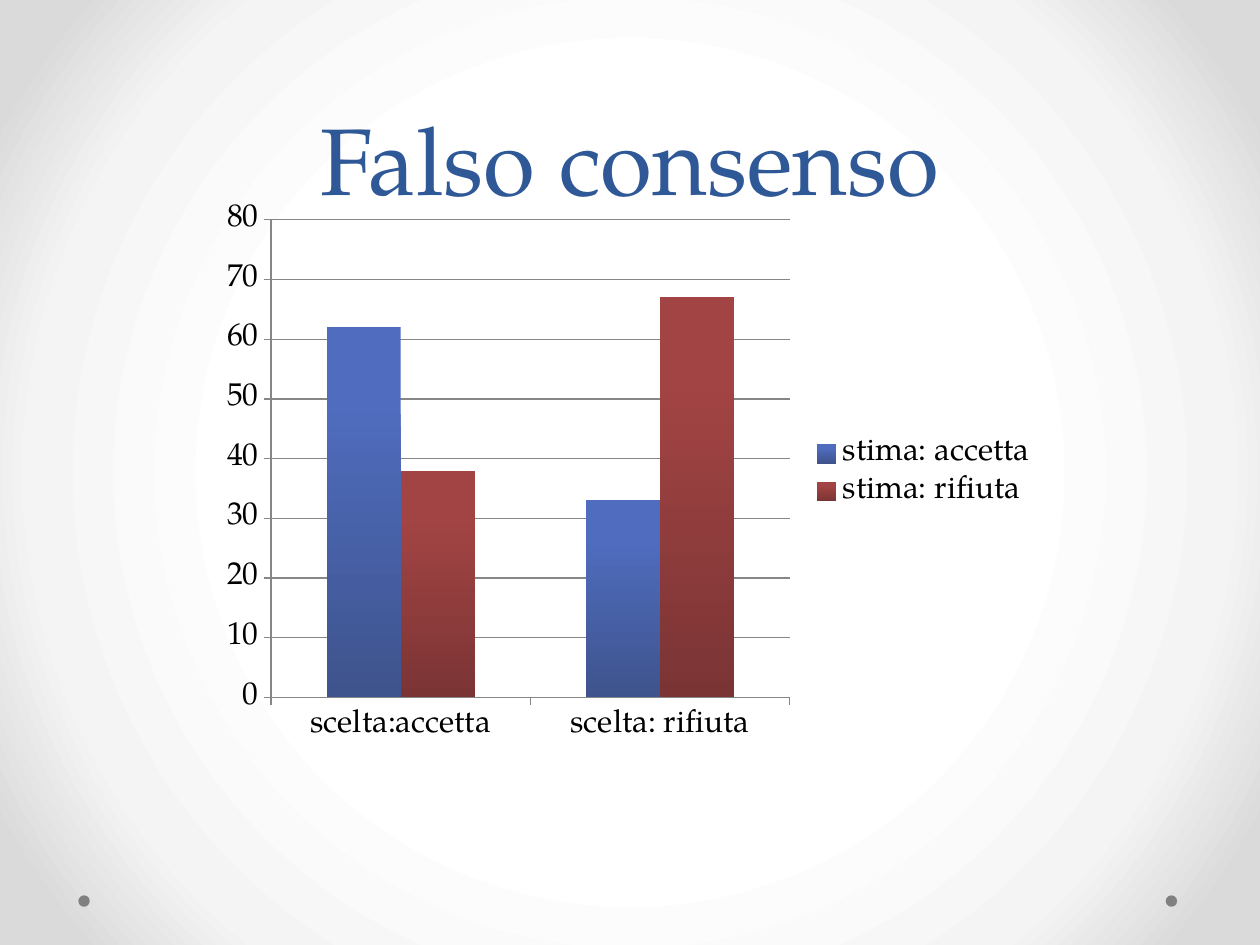
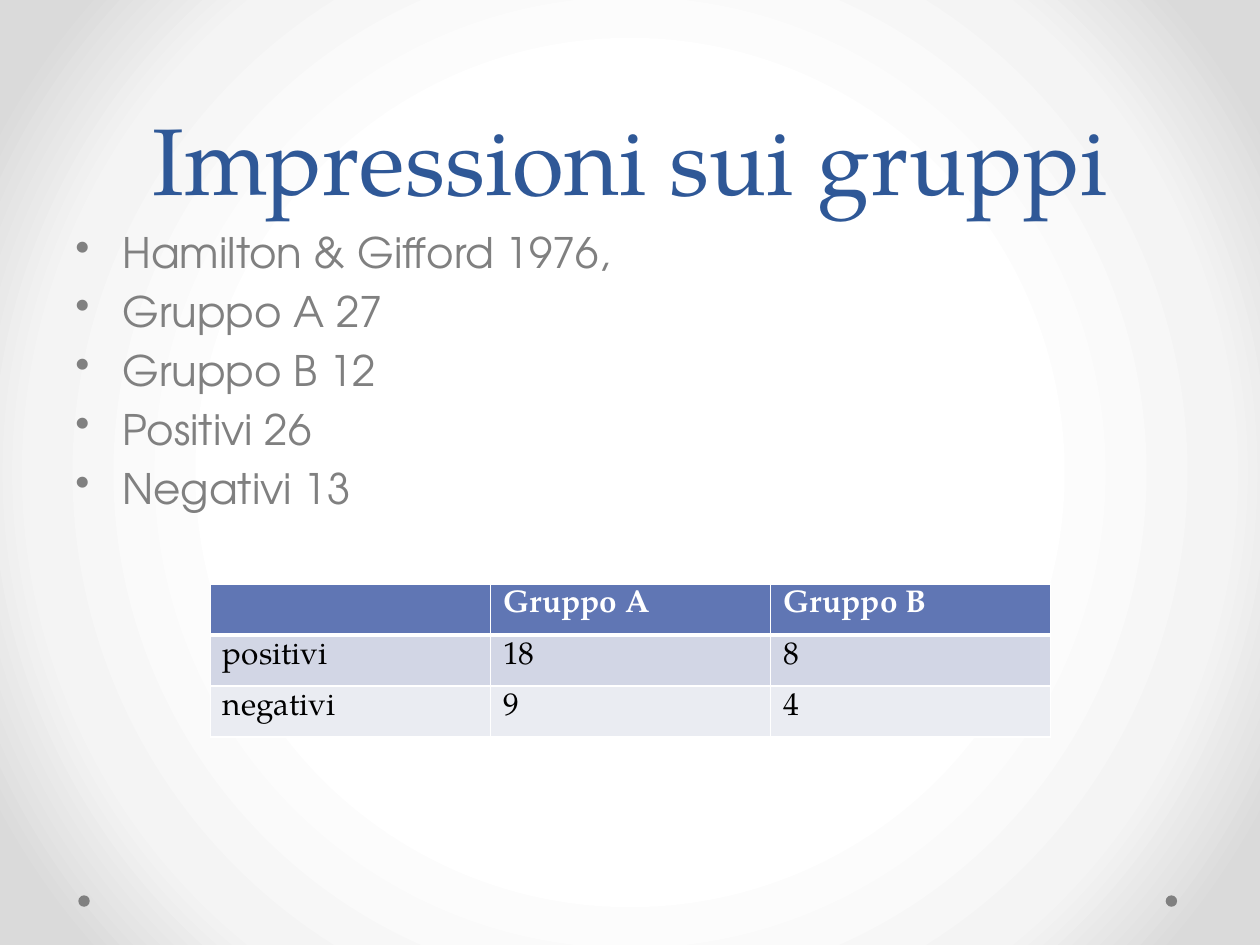
from pptx import Presentation
from pptx.chart.data import CategoryChartData
from pptx.dml.color import RGBColor
from pptx.enum.chart import XL_CHART_TYPE, XL_LEGEND_POSITION, XL_TICK_MARK
from pptx.enum.shapes import MSO_SHAPE
from pptx.enum.text import MSO_ANCHOR, PP_ALIGN
from pptx.oxml import parse_xml
from pptx.oxml.ns import nsdecls
from pptx.util import Cm, Pt

COLUMN = XL_CHART_TYPE.COLUMN_CLUSTERED
RIGHT = XL_LEGEND_POSITION.RIGHT
OUT = XL_TICK_MARK.OUTSIDE
OVAL = MSO_SHAPE.OVAL
TOP, BOTTOM = MSO_ANCHOR.TOP, MSO_ANCHOR.BOTTOM
LEFT, CENTER = PP_ALIGN.LEFT, PP_ALIGN.CENTER

# Shared look
SERIF, SANS = "TeX Gyre Pagella", "TeX Gyre Adventor"
NAVY, BLUE, GRAY = "2F5897", "6076B4", "808080"
BLACK, WHITE, AXIS = "000000", "FFFFFF", "868686"
BANDS = ["D2D6E5", "EAECF2"]
GLOW = [(50, WHITE), (76, "F4F4F4"), (92, "DADADA")]
BARS = [("4F6CBE", "3F548D"), ("A34444", "7B3434")]


def color(code):
    return RGBColor.from_string(code)


def write(para, text, size=18, font=SERIF, fill=BLACK, bold=False,
          align=LEFT, line=None, before=None, bullet=None):
    para.alignment = align
    if line:
        para.line_spacing = Pt(line)
    if before:
        para.space_before = Pt(before)
    if bullet:
        props = para._p.get_or_add_pPr()
        props.set("marL", str(Cm(0.95)))
        props.set("indent", str(-Cm(0.95)))
        props.append(parse_xml(f'<a:buChar {nsdecls("a")} char="{bullet}"/>'))
    run = para.add_run()
    run.text = text
    run.font.size, run.font.name, run.font.bold = Pt(size), font, bold
    run.font.color.rgb = color(fill)


def add_box(slide, lines, x, y, w, h, anchor=TOP, **form):
    frame = slide.shapes.add_textbox(Cm(x), Cm(y), Cm(w), Cm(h)).text_frame
    frame.word_wrap = True
    frame.vertical_anchor = anchor
    for i, text in enumerate(lines):
        para = frame.add_paragraph() if i else frame.paragraphs[0]
        write(para, text, **form)


def add_glow(slide):
    stops = "".join(
        f'<a:gs pos="{pos * 1000}"><a:srgbClr val="{code}"/></a:gs>'
        for pos, code in GLOW)
    slide.background.fill.solid()
    props = slide._element.cSld.bg.bgPr
    solid = props[0]
    props.replace(solid, parse_xml(
        f'<a:gradFill {nsdecls("a")} rotWithShape="1"><a:gsLst>{stops}</a:gsLst>'
        '<a:path path="circle"><a:fillToRect l="50000" t="50000" '
        'r="50000" b="50000"/></a:path></a:gradFill>'))


def add_dot(slide, x):
    dot = slide.shapes.add_shape(OVAL, Cm(x), Cm(18.05), Cm(0.23), Cm(0.23))
    dot.shadow.inherit = False
    dot.fill.solid()
    dot.fill.fore_color.rgb = color(GRAY)
    dot.line.fill.background()


def add_page(deck, title):
    slide = deck.slides.add_slide(deck.slide_layouts[6])
    add_glow(slide)
    for x in (1.58, 23.5):
        add_dot(slide, x)
    add_box(slide, [title], 1.27, 0, 22.86, 4.45, anchor=BOTTOM,
            size=54, fill=NAVY, align=CENTER, line=58)
    return slide


def add_bars(slide, cats, rows, x, y, w, h):
    data = CategoryChartData()
    data.categories = cats
    for name, vals in rows:
        data.add_series(name, vals)
    chart = slide.shapes.add_chart(
        COLUMN, Cm(x), Cm(y), Cm(w), Cm(h), data).chart
    chart.has_title = False
    chart.font.size, chart.font.name = Pt(18), SERIF
    chart.font.color.rgb = color(BLACK)
    chart.has_legend = True
    chart.legend.position = RIGHT
    chart.legend.include_in_layout = False

    # Axes and grid
    scale = chart.value_axis
    scale.minimum_scale, scale.maximum_scale, scale.major_unit = 0, 80, 10
    scale.has_major_gridlines = True
    for axis in (chart.category_axis, scale):
        axis.major_tick_mark = OUT
    for part in (chart.category_axis, scale, scale.major_gridlines):
        part.format.line.color.rgb = color(AXIS)
        part.format.line.width = Pt(0.75)

    # Shaded columns
    plot = chart.plots[0]
    plot.gap_width, plot.overlap = 150, 0
    plot.vary_by_categories = False
    for row, shades in zip(plot.series, BARS):
        fill = row.format.fill
        fill.gradient()
        fill.gradient_angle = 270
        for stop, pos, shade in zip(fill.gradient_stops, (0.2, 1), shades):
            stop.position = pos
            stop.color.rgb = color(shade)


def add_edges(cell, **widths):
    props = cell._tc.get_or_add_tcPr()
    for side in "LRTB":
        width = Pt(widths.get(side, 1))
        props.append(parse_xml(
            f'<a:ln{side} {nsdecls("a")} w="{width}"><a:solidFill>'
            f'<a:srgbClr val="{WHITE}"/></a:solidFill></a:ln{side}>'))


def add_grid(slide, rows, x, y, w, h):
    grid = slide.shapes.add_table(
        len(rows), len(rows[0]), Cm(x), Cm(y), Cm(w), Cm(h)).table
    for r, row in enumerate(rows):
        head = r == 0
        for c, text in enumerate(row):
            cell = grid.cell(r, c)
            add_edges(cell, B=3 if head else 1, T=3 if r == 1 else 1)
            cell.fill.solid()
            cell.fill.fore_color.rgb = color(BLUE if head else BANDS[r - 1])
            if text:
                write(cell.text_frame.paragraphs[0], text, bold=head,
                      fill=WHITE if head else BLACK)


def main():
    deck = Presentation()
    deck.slide_width, deck.slide_height = Cm(25.4), Cm(19.05)

    # False consensus chart
    slide = add_page(deck, "Falso consenso")
    add_bars(slide, ["scelta:accetta", "scelta: rifiuta"],
             [("stima: accetta", (62, 33)), ("stima: rifiuta", (38, 67))],
             4.24, 3.89, 16.94, 11.28)

    # Group impressions list and table
    slide = add_page(deck, "Impressioni sui gruppi")
    add_box(slide, ["Hamilton & Gifford 1976,", "Gruppo A 27", "Gruppo B 12",
                    "Positivi 26", "Negativi 13"],
            1.27, 4.45, 22.86, 12.57, size=24, font=SANS, fill=GRAY,
            before=4.8, bullet="•")
    add_grid(slide, [("", "Gruppo A", "Gruppo B"),
                     ("positivi", "18", "8"),
                     ("negativi", "9", "4")], 4.24, 11.77, 16.94, 3.09)

    deck.save("out.pptx")


if __name__ == "__main__":
    main()
